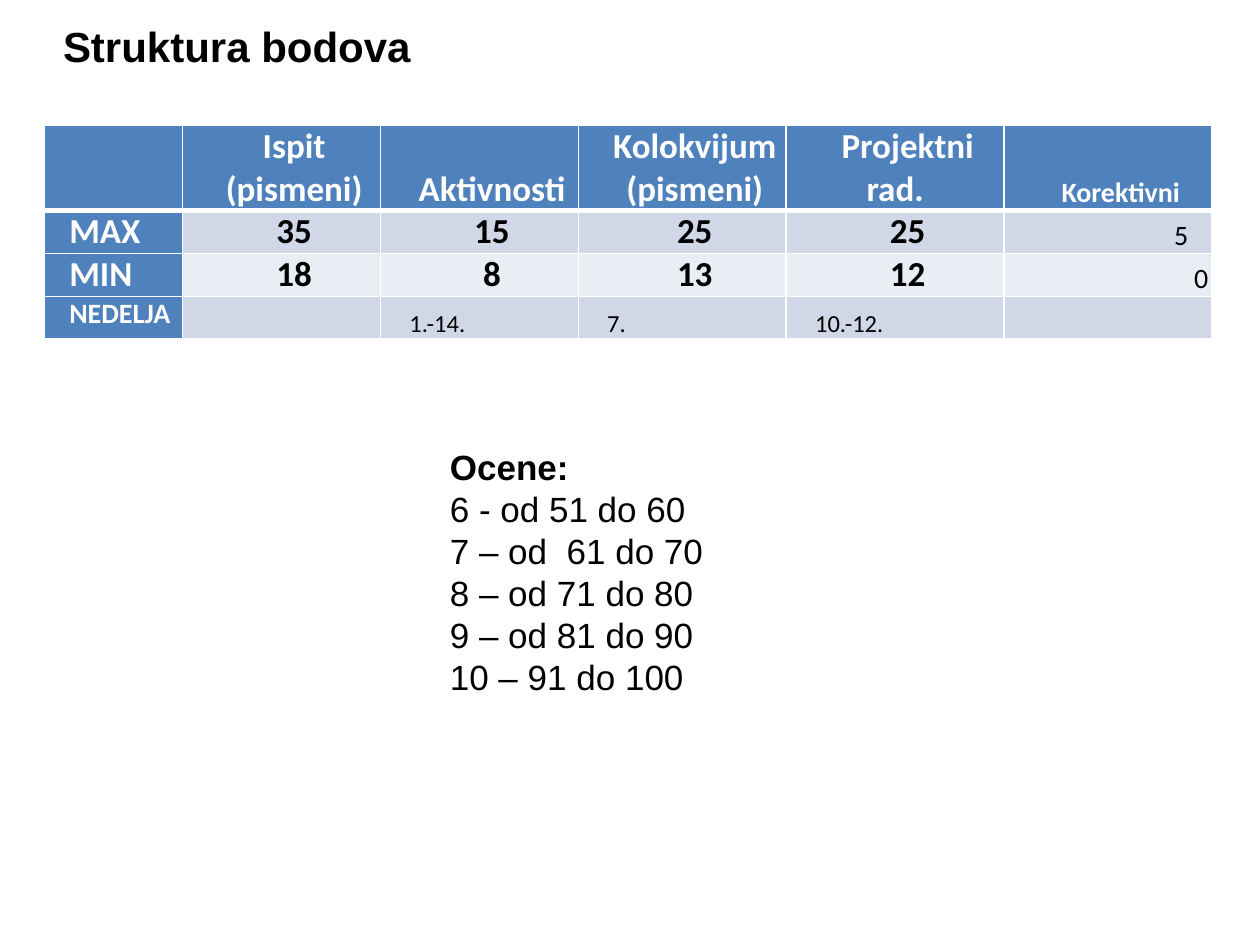
"""Build the slide with the structure of points and the grading scale."""
from lxml import etree
from pptx import Presentation
from pptx.dml.color import RGBColor
from pptx.enum import text as t
from pptx.oxml import ns
from pptx.util import Inches, Pt

BLACK = RGBColor(0, 0, 0)
WHITE = RGBColor(255, 255, 255)
HEADER_BLUE = RGBColor(0x4F, 0x81, 0xBD)
BAND_DARK = RGBColor(0xD0, 0xD8, 0xE8)
BAND_LIGHT = RGBColor(0xE9, 0xED, 0xF4)


def write_paragraph(paragraph, words, align, **font):
    paragraph.alignment = align
    properties = paragraph._p.get_or_add_pPr()
    properties.set("marL", "0")
    properties.set("indent", str(Inches(0.2)))
    run = paragraph.add_run()
    run.text = words
    color = font.pop("color")
    for key, value in font.items():
        setattr(run.font, key, value)
    run.font.color.rgb = color


def add_border(cell, side, points):
    line = etree.SubElement(cell._tc.get_or_add_tcPr(), ns.qn("a:ln" + side), w=str(Pt(points)))
    fill = etree.SubElement(line, ns.qn("a:solidFill"))
    etree.SubElement(fill, ns.qn("a:srgbClr"), val=str(WHITE))


deck = Presentation()
deck.slide_width, deck.slide_height = Inches(10), Inches(7.5)
slide = deck.slides.add_slide(deck.slide_layouts[1])
heading, grades = slide.placeholders

places = [
    (heading, (0.2, 0.11, 3.28, 0.5), t.MSO_ANCHOR.TOP),
    (grades, (3.27, 3.28, 2.42, 2.31), t.MSO_ANCHOR.BOTTOM),
]
for holder, place, anchor in places:
    holder.left, holder.top, holder.width, holder.height = map(Inches, place)
    frame_format = {
        "word_wrap": True, "auto_size": t.MSO_AUTO_SIZE.NONE,
        "vertical_anchor": anchor, "margin_right": 0,
    }
    for key, value in frame_format.items():
        setattr(holder.text_frame, key, value)

write_paragraph(heading.text_frame.paragraphs[0], "Struktura bodova", t.PP_ALIGN.JUSTIFY,
                name="Arial", size=Pt(24), bold=True, color=BLACK)

scale = ["Ocene:", "6 - od 51 do 60", "7 – od  61 do 70", "8 – od 71 do 80",
         "9 – od 81 do 90", "10 – 91 do 100"]
for index, grade in enumerate(scale):
    frame = grades.text_frame
    paragraph = frame.add_paragraph() if index else frame.paragraphs[0]
    paragraph.line_spacing = Pt(24)
    paragraph.space_before = Pt(0)
    etree.SubElement(paragraph._p.get_or_add_pPr(), ns.qn("a:buNone"))
    write_paragraph(paragraph, grade, t.PP_ALIGN.JUSTIFY,
                    name="Arial", size=Pt(20), bold=index == 0, color=BLACK)

points_rows = [
    ["", "Ispit\n(pismeni)", "Aktivnosti", "Kolokvijum\n(pismeni)", "Projektni rad.", "Korektivni"],
    ["MAX", "35", "15", "25", "25", "5"],
    ["MIN", "18", "8", "13", "12", "0"],
    ["NEDELJA", "", "1.-14.", "7.", "10.-12.", ""],
]
column_widths = [1.1, 1.57, 1.57, 1.65, 1.73, 1.65]
row_heights = [0.68, 0.34, 0.34, 0.34]
points = slide.shapes.add_table(4, 6, Inches(0.35), Inches(0.99),
                                Inches(sum(column_widths)), Inches(sum(row_heights))).table
points.first_col = True
for column, width in zip(points.columns, column_widths):
    column.width = Inches(width)
for row, height in zip(points.rows, row_heights):
    row.height = Inches(height)

for r, labels in enumerate(points_rows):
    for c, label in enumerate(labels):
        cell = points.cell(r, c)
        is_header = r == 0 or c == 0
        is_week = r == 3 and c > 0
        is_correction = c == 5
        for side, width in zip("LRTB", (1, 1, 3 if r == 1 else 1, 3 if r == 0 else 1)):
            add_border(cell, side, width)
        cell.fill.solid()
        cell.fill.fore_color.rgb = HEADER_BLUE if is_header else BAND_LIGHT if r == 2 else BAND_DARK
        side_margin = Inches(0.03) if c else 0
        cell_format = {
            "margin_left": side_margin,
            "margin_right": Inches(0.19) if label == "5" else side_margin,
            "margin_top": 0, "margin_bottom": 0,
            "vertical_anchor": t.MSO_ANCHOR.BOTTOM if c else t.MSO_ANCHOR.TOP,
        }
        for key, value in cell_format.items():
            setattr(cell, key, value)
        if not label:
            continue
        if c == 0 or is_week:
            align = t.PP_ALIGN.LEFT
        elif is_correction and r > 0:
            align = t.PP_ALIGN.RIGHT
        else:
            align = t.PP_ALIGN.CENTER
        size = 14 if is_week else 16 if is_correction or r == 3 else 20
        for index, words in enumerate(label.split("\n")):
            frame = cell.text_frame
            paragraph = frame.add_paragraph() if index else frame.paragraphs[0]
            write_paragraph(paragraph, words, align, name="Calibri", size=Pt(size),
                            bold=is_header or not (is_week or is_correction),
                            color=WHITE if is_header else BLACK)

deck.save("out.pptx")
